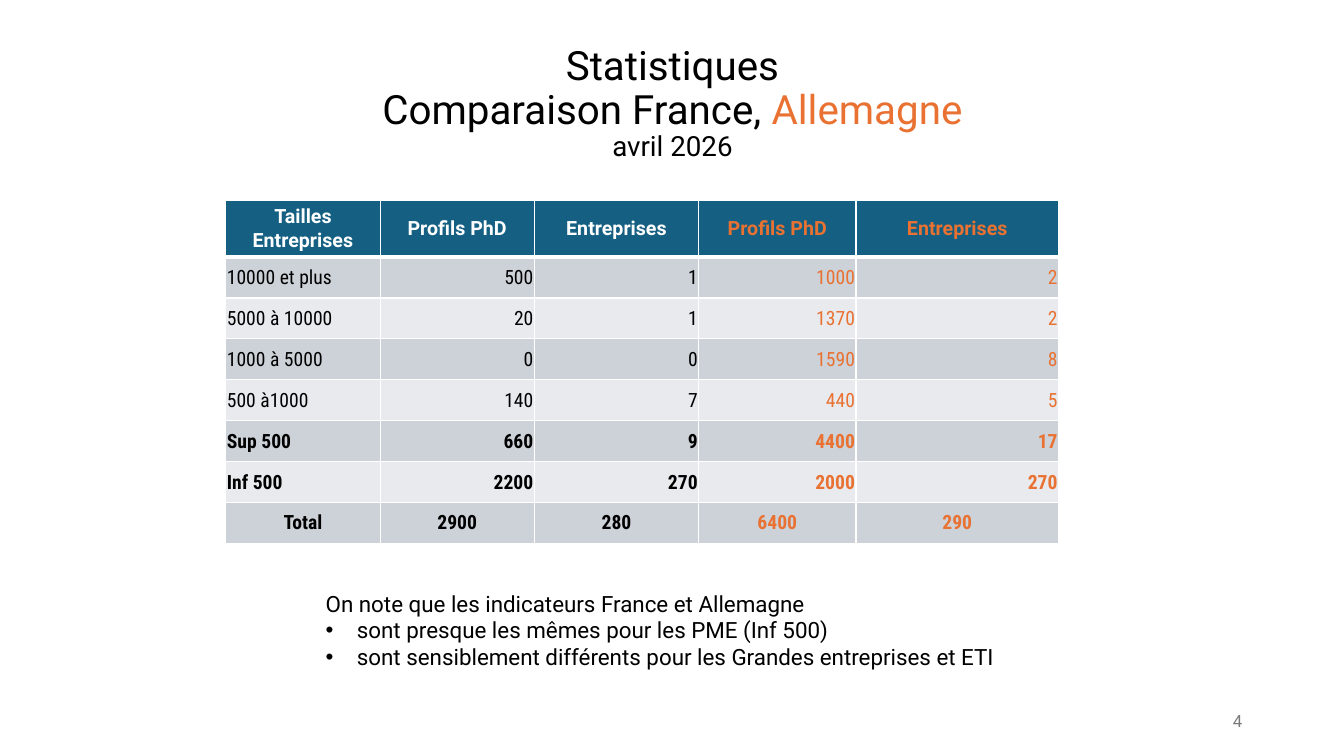
from copy import deepcopy
from dataclasses import dataclass

from lxml.etree import SubElement
from pptx import Presentation
from pptx.dml.color import RGBColor
from pptx.enum.text import MSO_ANCHOR as Anchor, MSO_AUTO_SIZE as AutoSize, PP_ALIGN as Align
from pptx.oxml.ns import qn
from pptx.util import Inches, Pt


@dataclass(frozen=True)
class Theme:
    black: str = "000000"
    white: str = "FFFFFF"
    orange: str = "E97132"
    grey: str = "797979"
    header: str = "156082"
    bands: tuple = ("CCD2D8", "E8EAED")
    font: str = "Roboto"
    condensed: str = "Roboto Condensed"
    title_size: float = 28.8
    date_size: float = 19.8
    table_size: float = 14
    body_size: float = 16
    number_size: float = 12


theme = Theme()


def set_format(target, **values):
    """Set each value as an attribute of target; color takes a hex string."""
    for name, value in values.items():
        if name == "color":
            target.color.rgb = RGBColor.from_string(value)
        else:
            setattr(target, name, value)


def add_border(cell, side, width):
    line = SubElement(cell._tc.get_or_add_tcPr(), qn(f"a:{side}"), w=str(Pt(width)))
    SubElement(SubElement(line, qn("a:solidFill")), qn("a:srgbClr"), val=theme.white)


presentation = Presentation()
set_format(presentation, slide_width=Inches(13.33), slide_height=Inches(7.5))
slide = presentation.slides.add_slide(presentation.slide_layouts[1])
title, remarks = slide.placeholders

# Title
set_format(title, left=Inches(0.92), top=Inches(0.4), width=Inches(11.5), height=Inches(1.27))
set_format(title.text_frame, vertical_anchor=Anchor.MIDDLE, auto_size=AutoSize.NONE, word_wrap=True)
paragraph = title.text_frame.paragraphs[0]
set_format(paragraph, alignment=Align.CENTER, line_spacing=0.9)
title_runs = [
    ("Statistiques", theme.title_size, theme.black, True),
    ("Comparaison France, ", theme.title_size, theme.black, False),
    ("Allemagne", theme.title_size, theme.orange, True),
    ("avril 2026", theme.date_size, theme.black, False),
]
for text, size, color, breaks in title_runs:
    run = paragraph.add_run()
    run.text = text
    set_format(run.font, name=theme.font, size=Pt(size), color=color)
    if breaks:
        paragraph.add_line_break()
        paragraph._p[-1].append(deepcopy(run._r.rPr))

# Table
rows = [
    ("Tailles Entreprises", "Profils PhD", "Entreprises", "Profils PhD", "Entreprises"),
    ("10000 et plus", "500", "1", "1000", "2"),
    ("5000 à 10000", "20", "1", "1370", "2"),
    ("1000 à 5000", "0", "0", "1590", "8"),
    ("500 à1000", "140", "7", "440", "5"),
    ("Sup 500", "660", "9", "4400", "17"),
    ("Inf 500", "2200", "270", "2000", "270"),
    ("Total", "2900", "280", "6400", "290"),
]
column_widths = (1.53, 1.53, 1.63, 1.56, 2.01)
table_height, header_height = 3.39, 0.55
first_bold_row, first_german_column = 5, 3
last_row = len(rows) - 1
body_height = (table_height - header_height) / last_row

table = slide.shapes.add_table(
    len(rows), len(column_widths), Inches(2.24), Inches(1.99),
    Inches(sum(column_widths)), Inches(table_height),
).table
for column, width in zip(table.columns, column_widths):
    column.width = Inches(width)

for row_index, values in enumerate(rows):
    is_header = row_index == 0
    table.rows[row_index].height = Inches(header_height if is_header else body_height)
    for column_index, value in enumerate(values):
        cell = table.cell(row_index, column_index)
        cell.vertical_anchor = Anchor.MIDDLE
        if not is_header:
            set_format(cell, margin_left=Inches(0.01), margin_right=Inches(0.01),
                       margin_top=Inches(0.01), margin_bottom=0)
        add_border(cell, "lnL", 1)
        add_border(cell, "lnR", 1)
        add_border(cell, "lnT", 3 if row_index == 1 else 1)
        add_border(cell, "lnB", 3 if is_header else 1)
        cell.fill.solid()
        fill = theme.header if is_header else theme.bands[(row_index - 1) % 2]
        cell.fill.fore_color.rgb = RGBColor.from_string(fill)

        if row_index in (0, last_row):
            alignment = Align.CENTER
        else:
            alignment = Align.RIGHT if column_index else Align.LEFT
        if column_index >= first_german_column:
            color = theme.orange
        else:
            color = theme.white if is_header else theme.black
        paragraph = cell.text_frame.paragraphs[0]
        paragraph.alignment = alignment
        run = paragraph.add_run()
        run.text = value
        set_format(run.font, name=theme.font if is_header else theme.condensed,
                   size=Pt(theme.table_size), color=color,
                   bold=is_header or row_index >= first_bold_row)

# Remarks on the figures
set_format(remarks, left=Inches(3.13), top=Inches(5.8), width=Inches(7.07), height=Inches(0.91))
set_format(remarks.text_frame, vertical_anchor=Anchor.TOP, auto_size=AutoSize.NONE, word_wrap=True)
lines = [
    "On note que les indicateurs France et Allemagne",
    "sont presque les mêmes pour les PME (Inf 500)",
    "sont sensiblement différents pour les Grandes entreprises et ETI",
]
remarks.text_frame.text = "\n".join(lines)
for index, paragraph in enumerate(remarks.text_frame.paragraphs):
    set_format(paragraph, space_before=Pt(0), space_after=Pt(0), line_spacing=1.0)
    properties = paragraph._p.get_or_add_pPr()
    indent = Inches(0.31) if index else 0
    properties.set("marL", str(indent))
    properties.set("indent", str(-indent))
    if index:
        SubElement(properties, qn("a:buFont"), typeface="Arial")
        SubElement(properties, qn("a:buChar"), char="•")
    else:
        SubElement(properties, qn("a:buNone"))
    set_format(paragraph.runs[0].font, name=theme.font, size=Pt(theme.body_size), color=theme.black)

# Slide number
number = slide.shapes.add_textbox(Inches(9.42), Inches(6.95), Inches(3), Inches(0.4))
set_format(number.text_frame, text="4", vertical_anchor=Anchor.MIDDLE, word_wrap=True)
paragraph = number.text_frame.paragraphs[0]
paragraph.alignment = Align.RIGHT
set_format(paragraph.runs[0].font, name=theme.font, size=Pt(theme.number_size), color=theme.grey)

presentation.save("out.pptx")
